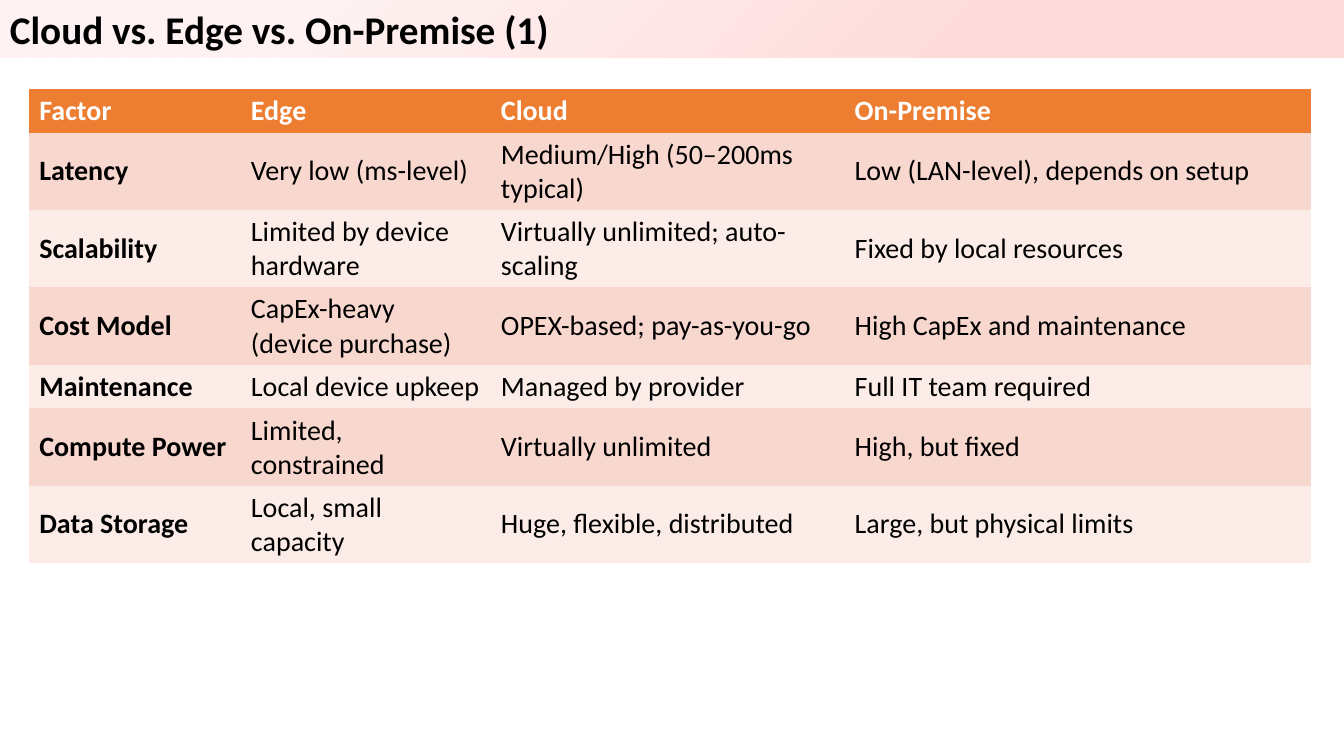
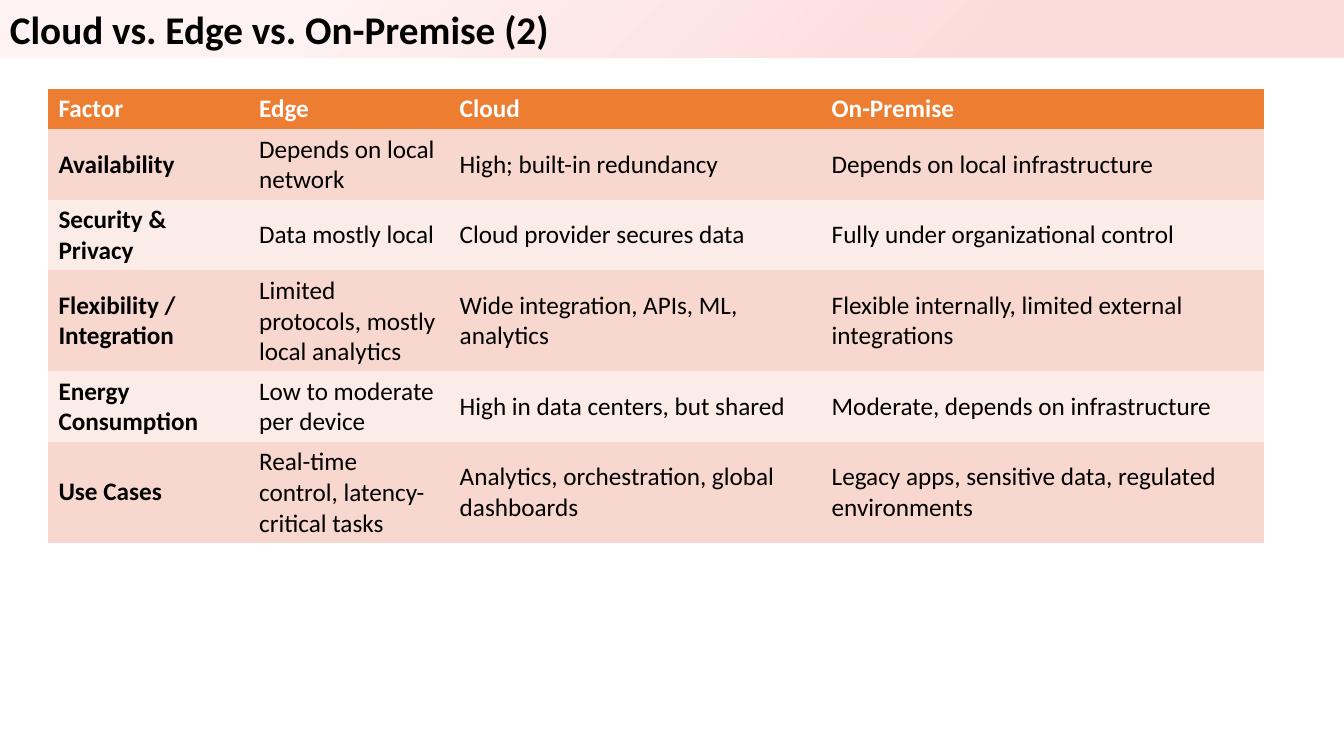
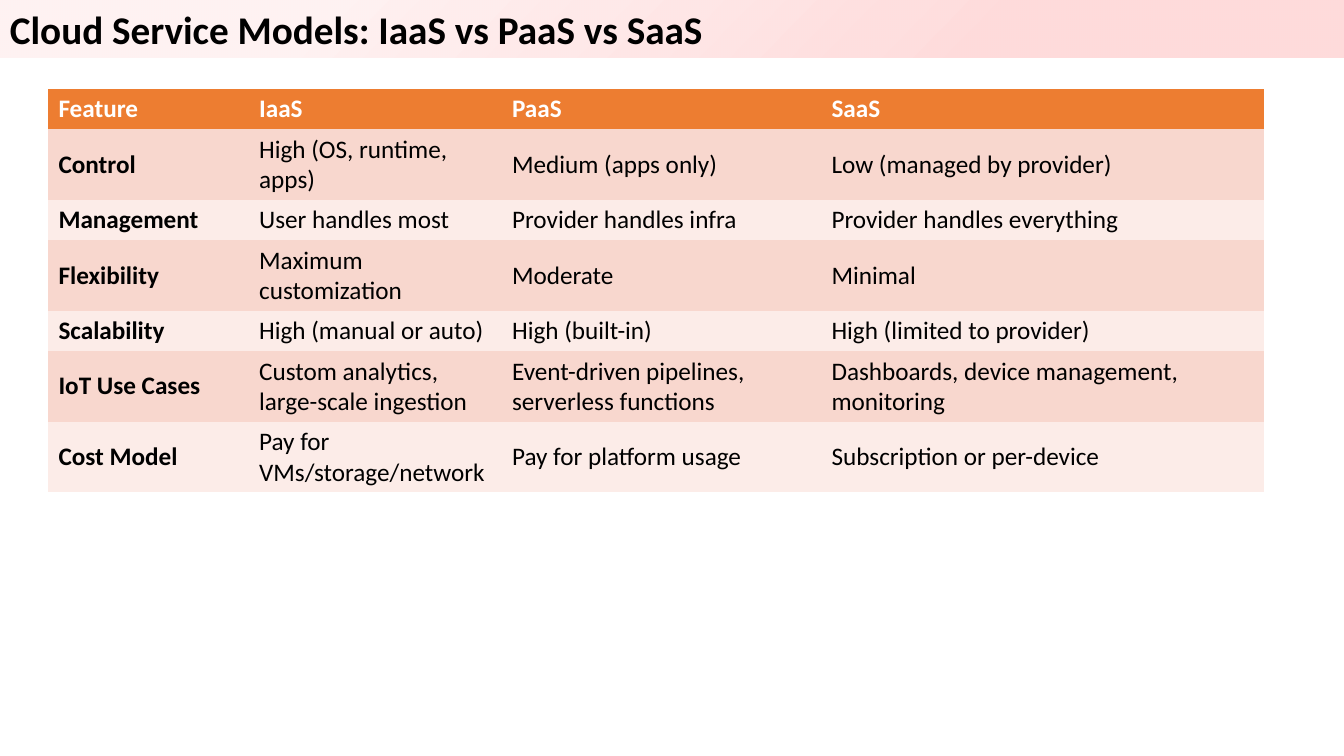
import pptx
import pptx.dml.color
import pptx.enum.text
import pptx.oxml
import pptx.oxml.ns
import pptx.util

Pt = pptx.util.Pt
qn = pptx.oxml.ns.qn

# Shared look
COLOURS = {
    "band": "FF0000",
    "title": "000000",
    "header": "ED7D31",
    "header_text": "FFFFFF",
    "odd_row": "F8D7CE",
    "even_row": "FCECE8",
    "body_text": "000000",
}
FONT = "Calibri"
PAGE_WIDTH, PAGE_HEIGHT = 960, 540
BAND_HEIGHT = 41.2
TITLE_SIZE = 28
TABLE_TOP = 63.4
ROW_HEIGHT = 21.6  # minimum; rows grow with their text
PLAIN_TABLE_STYLE = "{2D5ABB26-0587-4C30-8999-92F81FD0307C}"
BAND_STOPS = [(26, 14), (76, 5)]  # position and opacity, in percent

# Content
EDGE_CLOUD_HEADER = ["Factor", "Edge", "Cloud", "On-Premise"]
SLIDES = [
    {
        "title": "Cloud vs. Edge vs. On-Premise (1)",
        "left": 20.9, "height": 338.4, "size": 20,
        "columns": [151.2, 178.6, 252.7, 333.4],
        "rows": [
            EDGE_CLOUD_HEADER,
            ["Latency", "Very low (ms-level)", "Medium/High (50–200ms typical)",
             "Low (LAN-level), depends on setup"],
            ["Scalability", "Limited by device hardware",
             "Virtually unlimited; auto-scaling", "Fixed by local resources"],
            ["Cost Model", "CapEx-heavy (device purchase)",
             "OPEX-based; pay-as-you-go", "High CapEx and maintenance"],
            ["Maintenance", "Local device upkeep", "Managed by provider",
             "Full IT team required"],
            ["Compute Power", "Limited, constrained", "Virtually unlimited",
             "High, but fixed"],
            ["Data Storage", "Local, small capacity",
             "Huge, flexible, distributed", "Large, but physical limits"],
        ],
    },
    {
        "title": "Cloud vs. Edge vs. On-Premise (2)",
        "left": 34.6, "height": 324, "size": 18,
        "columns": [143.3, 143.3, 265.7, 316.1],
        "rows": [
            EDGE_CLOUD_HEADER,
            ["Availability", "Depends on local network",
             "High; built-in redundancy", "Depends on local infrastructure"],
            ["Security & Privacy", "Data mostly local",
             "Cloud provider secures data", "Fully under organizational control"],
            ["Flexibility / Integration",
             "Limited protocols, mostly local analytics",
             "Wide integration, APIs, ML, analytics",
             "Flexible internally, limited external integrations"],
            ["Energy Consumption", "Low to moderate per device",
             "High in data centers, but shared",
             "Moderate, depends on infrastructure"],
            ["Use Cases", "Real-time control, latency-critical tasks",
             "Analytics, orchestration, global dashboards",
             "Legacy apps, sensitive data, regulated environments"],
        ],
    },
    {
        "title": "Cloud Service Models: IaaS vs PaaS vs SaaS",
        "left": 34.6, "height": 288, "size": 18,
        "columns": [143.3, 180.7, 228.2, 316.1],
        "rows": [
            ["Feature", "IaaS", "PaaS", "SaaS"],
            ["Control", "High (OS, runtime, apps)", "Medium (apps only)",
             "Low (managed by provider)"],
            ["Management", "User handles most", "Provider handles infra",
             "Provider handles everything"],
            ["Flexibility", "Maximum customization", "Moderate", "Minimal"],
            ["Scalability", "High (manual or auto)", "High (built-in)",
             "High (limited to provider)"],
            ["IoT Use Cases", "Custom analytics, large-scale ingestion",
             "Event-driven pipelines, serverless functions",
             "Dashboards, device management, monitoring"],
            ["Cost Model", "Pay for VMs/storage/network",
             "Pay for platform usage", "Subscription or per-device"],
        ],
    },
]


def colour(name):
    return pptx.dml.color.RGBColor.from_string(COLOURS[name])


def write(para, text, size, colour_name, bold):
    para.text = text
    para.font.name = FONT
    para.font.size = Pt(size)
    para.font.bold = bold
    para.font.color.rgb = colour(colour_name)


def fill_band(box):
    """Radial, partly transparent gradient centred on the bottom right."""
    stops = "".join(
        f'<a:gs pos="{position * 1000}"><a:srgbClr val="{COLOURS["band"]}">'
        f'<a:alpha val="{opacity * 1000}"/></a:srgbClr></a:gs>'
        for position, opacity in BAND_STOPS)
    gradient = pptx.oxml.parse_xml(
        '<a:gradFill xmlns:a="http://schemas.openxmlformats.org/drawingml/2006/main"'
        f' rotWithShape="1"><a:gsLst>{stops}</a:gsLst>'
        '<a:path path="circle"><a:fillToRect l="100000" t="100000"/></a:path>'
        '</a:gradFill>')
    box.fill.background()
    properties = box.element.spPr
    properties.replace(properties.find(qn("a:noFill")), gradient)


def add_title_band(page, title):
    box = page.shapes.add_textbox(0, 0, Pt(PAGE_WIDTH), Pt(BAND_HEIGHT))
    fill_band(box)
    frame = box.text_frame
    frame.word_wrap = True
    frame.auto_size = pptx.enum.text.MSO_AUTO_SIZE.SHAPE_TO_FIT_TEXT
    write(frame.paragraphs[0], title, TITLE_SIZE, "title", True)


def add_comparison_table(page, left, height, size, columns, rows):
    holder = page.shapes.add_table(
        len(rows), len(columns), Pt(left), Pt(TABLE_TOP),
        Pt(sum(columns)), Pt(height))
    table = holder.table
    table.horz_banding = False
    holder.element.find(".//" + qn("a:tableStyleId")).text = PLAIN_TABLE_STYLE

    for column, width in zip(table.columns, columns):
        column.width = Pt(width)
    for row_number, texts in enumerate(rows):
        table.rows[row_number].height = Pt(ROW_HEIGHT)
        is_header = row_number == 0
        band = "header" if is_header else "odd_row" if row_number % 2 else "even_row"
        text_colour = "header_text" if is_header else "body_text"
        for column_number, text in enumerate(texts):
            cell = table.cell(row_number, column_number)
            cell.fill.solid()
            cell.fill.fore_color.rgb = colour(band)
            cell.vertical_anchor = pptx.enum.text.MSO_ANCHOR.MIDDLE
            write(cell.text_frame.paragraphs[0], text, size, text_colour,
                  is_header or column_number == 0)
    holder.height = Pt(height)


def main():
    deck = pptx.Presentation()
    deck.slide_width, deck.slide_height = Pt(PAGE_WIDTH), Pt(PAGE_HEIGHT)
    for content in SLIDES:
        page = deck.slides.add_slide(deck.slide_layouts[6])
        add_title_band(page, content["title"])
        add_comparison_table(page, content["left"], content["height"],
                             content["size"], content["columns"], content["rows"])
    deck.save("out.pptx")


if __name__ == "__main__":
    main()
